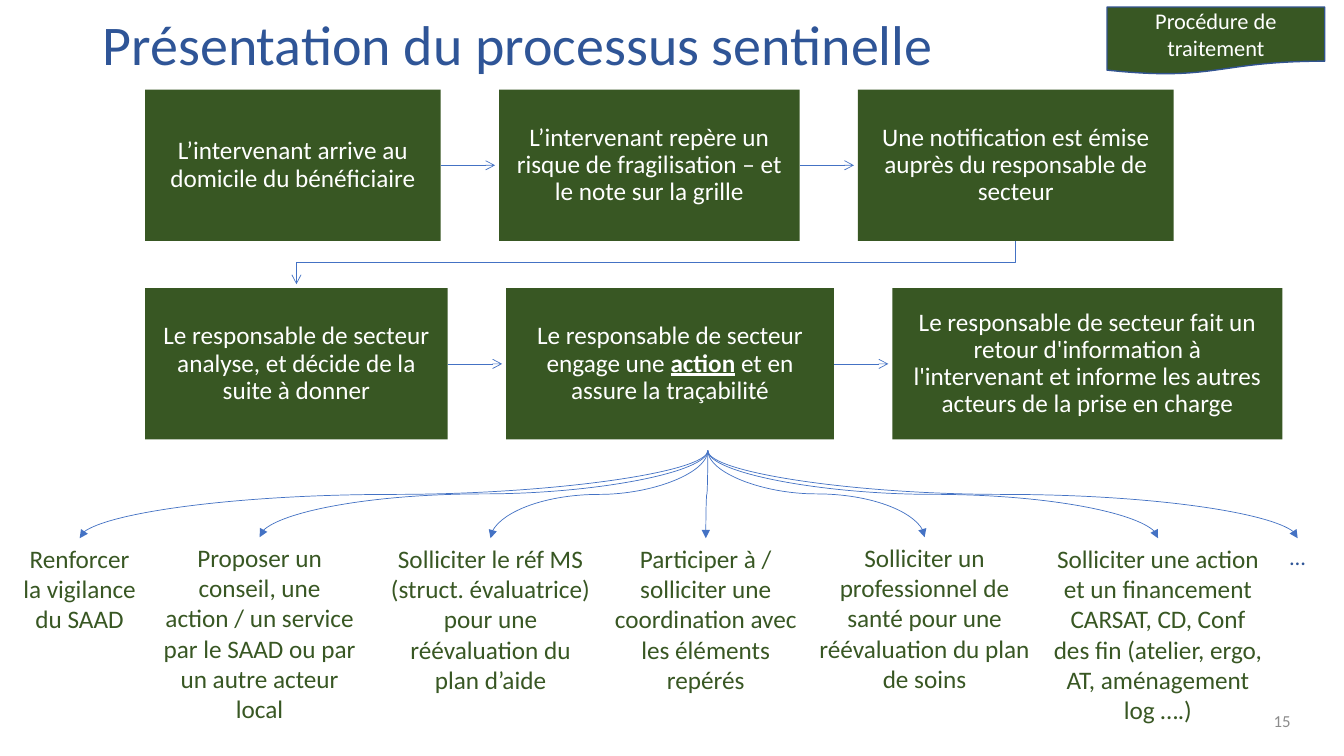
"""Build the slide that lays out the sentinel process."""
from dataclasses import dataclass

from lxml.etree import SubElement
from pptx import Presentation
from pptx.dml.color import RGBColor
from pptx.enum.shapes import MSO_CONNECTOR, MSO_SHAPE
from pptx.enum.text import MSO_ANCHOR, MSO_AUTO_SIZE, PP_ALIGN
from pptx.oxml.ns import qn
from pptx.shapes.autoshape import Shape
from pptx.shapes.connector import Connector
from pptx.slide import Slide
from pptx.util import Inches, Pt

HUES = {"green": "385723", "blue": "2F5597", "line": "4472C4",
        "edge": "325491", "white": "FFFFFF", "gray": "8C8C8C"}
FONT = "Calibri"
GAP, REACH = 0.58, 0.54
LEFT, HIGH = 1.44, 1.5
HUB = (7.02, 4.47)


@dataclass
class Step:
    """A box of the process, with bold words between asterisks."""
    wide: float
    text: str


@dataclass
class Choice:
    """An action that may follow, under its arrow."""
    left: float
    top: float
    wide: float
    high: float
    text: str
    size: int = 18
    hue: str = "green"


ROWS = {
    0.89: [
        Step(2.93, "L’intervenant arrive au domicile du bénéficiaire"),
        Step(2.98, "L’intervenant repère un risque de fragilisation – et le note sur la grille"),
        Step(3.13, "Une notification est émise auprès du responsable de secteur"),
    ],
    2.86: [
        Step(3, "Le responsable de secteur analyse, et décide de la suite à donner"),
        Step(3.25, "Le responsable de secteur engage une *action* et en assure la traçabilité"),
        Step(3.87, "Le responsable de secteur fait un retour d'information à l'intervenant "
                   "et informe les autres acteurs de la prise en charge"),
    ],
}
CHOICES = [
    Choice(0.11, 5.34, 1.36, 1.01, "Renforcer la vigilance du SAAD"),
    Choice(1.48, 5.33, 2.19, 1.62, "Proposer un conseil, une action / un service par le SAAD "
                                   "ou par un autre acteur local"),
    Choice(3.77, 5.34, 2.19, 1.62, "Solliciter le réf MS (struct. évaluatrice) pour une "
                                   "réévaluation du plan d’aide"),
    Choice(5.96, 5.34, 2.08, 1.62, "Participer à / solliciter une coordination avec les "
                                   "éléments repérés"),
    Choice(8.02, 5.33, 2.3, 1.62, "Solliciter un professionnel de santé pour une "
                                  "réévaluation du plan de soins"),
    Choice(10.32, 5.34, 2.33, 1.92, "Solliciter une action et un financement CARSAT, CD, Conf "
                                    "des fin (atelier, ergo, AT, aménagement log ….)"),
    Choice(12.49, 5.34, 0.76, 0.37, "…", 16, "blue"),
]


def tint(hue: str) -> RGBColor:
    """Return the named colour."""
    return RGBColor.from_string(HUES[hue])


def write(shape: Shape, text: str, size: int, hue: str,
          align: PP_ALIGN = PP_ALIGN.CENTER,
          anchor: MSO_ANCHOR = MSO_ANCHOR.MIDDLE) -> None:
    """Fill a shape with one paragraph."""
    frame = shape.text_frame
    frame.auto_size = MSO_AUTO_SIZE.NONE
    frame.word_wrap = True
    frame.vertical_anchor = anchor
    para = frame.paragraphs[0]
    para.alignment = align
    para.font.name, para.font.size = FONT, Pt(size)
    para.font.color.rgb = tint(hue)
    for spot, part in enumerate(text.split("*")):
        run = para.add_run()
        run.text = part
        if spot % 2:
            run.font.bold = run.font.underline = True


def block(slide: Slide, kind: MSO_SHAPE, area: tuple[float, ...], fill: str) -> Shape:
    """Add a filled shape with no line."""
    shape = slide.shapes.add_shape(kind, *map(Inches, area))
    shape.shadow.inherit = False
    shape.fill.solid()
    shape.fill.fore_color.rgb = tint(fill)
    shape.line.fill.background()
    return shape


def arrow(slide: Slide, kind: MSO_CONNECTOR, start: tuple[float, float],
          end: tuple[float, float], head: str) -> Connector:
    """Add a thin arrow between two points."""
    link = slide.shapes.add_connector(kind, *map(Inches, (*start, *end)))
    link.line.color.rgb = tint("line")
    link.line.width = Pt(0.5)
    SubElement(link.line._get_or_add_ln(), qn("a:tailEnd"), type=head)
    SubElement(link._element.spPr, qn("a:effectLst"))
    return link


def drop(slide: Slide, kind: MSO_CONNECTOR, start: tuple[float, float],
         end: tuple[float, float], head: str) -> None:
    """Add a bent arrow that leaves and lands upright, by a quarter turn."""
    midx, midy = (start[0] + end[0]) / 2, (start[1] + end[1]) / 2
    wide, high = abs(end[0] - start[0]) / 2, (end[1] - start[1]) / 2
    side = 1 if end[0] > start[0] else -1
    link = arrow(slide, kind, (midx + side * high, midy - wide),
                 (midx - side * high, midy + wide), head)
    turn = 270 if side > 0 else 90
    link._element.spPr.find(qn("a:xfrm")).set("rot", str(turn * 60000))


def steps(slide: Slide, top: float, row: list[Step]) -> None:
    """Draw a row of boxes joined by arrows."""
    left = LEFT
    for spot, step in enumerate(row):
        box = block(slide, MSO_SHAPE.RECTANGLE, (left, top, step.wide, HIGH), "green")
        write(box, step.text, 18, "white")
        frame = box.text_frame
        frame.margin_left = frame.margin_right = Inches(0.14)
        frame.margin_top = frame.margin_bottom = Inches(0.14)
        frame.paragraphs[0].line_spacing = 0.9
        left += step.wide
        if spot < len(row) - 1:
            mid = top + HIGH / 2
            arrow(slide, MSO_CONNECTOR.STRAIGHT, (left, mid), (left + REACH, mid), "arrow")
        left += GAP


def main() -> None:
    """Draw the slide and save it."""
    deck = Presentation()
    deck.slide_width, deck.slide_height = Inches(13.33), Inches(7.5)
    slide = deck.slides.add_slide(deck.slide_layouts[5])

    title = slide.shapes.title
    title.left, title.top = Inches(0.92), Inches(0.2)
    title.width, title.height = Inches(11.44), Inches(0.54)
    write(title, "Présentation du processus sentinelle", 40, "blue", PP_ALIGN.LEFT)
    title.text_frame.paragraphs[0].line_spacing = 0.9

    for top, row in ROWS.items():
        steps(slide, top, row)
    drop(slide, MSO_CONNECTOR.ELBOW, (10.07, 2.39), (2.94, 2.82), "arrow")

    for pick in CHOICES:
        area = (pick.left, pick.top, pick.wide, pick.high)
        box = block(slide, MSO_SHAPE.RECTANGLE, area, "white")
        write(box, pick.text, pick.size, pick.hue, anchor=MSO_ANCHOR.TOP)
        drop(slide, MSO_CONNECTOR.CURVE, HUB,
             (pick.left + pick.wide / 2, pick.top), "triangle")

    badge = block(slide, MSO_SHAPE.FLOWCHART_DOCUMENT, (10.98, 0.07, 2.16, 0.67), "green")
    badge.line.color.rgb = tint("edge")
    badge.line.width = Pt(1)
    write(badge, "Procédure de traitement", 16, "white")

    page = slide.shapes.add_textbox(*map(Inches, (12.42, 6.95, 0.48, 0.4)))
    write(page, "15", 12, "gray", PP_ALIGN.RIGHT)
    deck.save("out.pptx")


if __name__ == "__main__":
    main()
